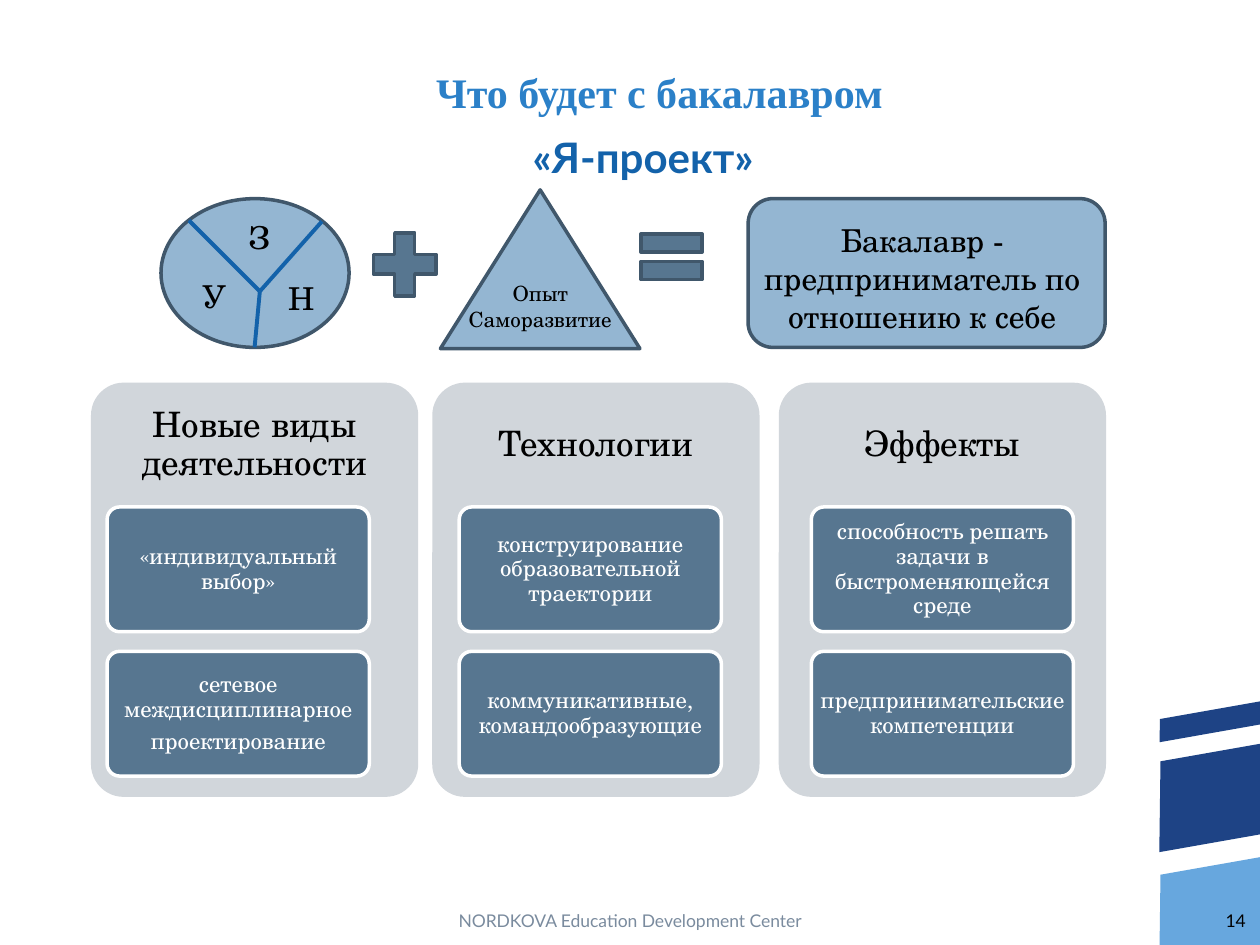
from lxml import etree
from pptx import Presentation
from pptx.dml.color import RGBColor
from pptx.enum import shapes as sh, text as tx
from pptx.oxml import ns
from pptx.util import Pt

SERIF = "TeX Gyre Schola"
BLUE, PALE, SLATE, EDGE = "1362AA", "94B6D2", "577690", "40576B"
PANEL, NAVY, SKY = "D1D6DB", "1E4385", "67A7DE"
KIND = sh.MSO_SHAPE

COLUMNS = [
    ("Новые виды деятельности",
     ["«индивидуальный выбор»", "сетевое междисциплинарное\nпроектирование"]),
    ("Технологии",
     ["конструирование образовательной траектории",
      "коммуникативные, командообразующие"]),
    ("Эффекты",
     ["способность решать задачи в быстроменяющейся среде",
      "предпринимательские компетенции"]),
]


def colour(value):
    return RGBColor.from_string(value)


def points(box):
    return [Pt(length) for length in box]


def write(holder, words, size=18, font=SERIF, ink="000000", bold=False, align="CENTER",
          anchor="TOP", insets=(7.2, 3.6), wrap=True, spacing=None, after=0):
    frame = holder.text_frame
    frame.word_wrap = wrap
    frame.vertical_anchor = getattr(tx.MSO_ANCHOR, anchor)
    frame.margin_left = frame.margin_right = Pt(insets[0])
    frame.margin_top = frame.margin_bottom = Pt(insets[1])
    frame.text = words
    for paragraph in frame.paragraphs:
        paragraph.alignment = getattr(tx.PP_ALIGN, align)
        paragraph.line_spacing = spacing
        paragraph.space_after = Pt(after)
        paragraph.font.size = Pt(size)
        paragraph.font.name = font
        paragraph.font.bold = bold
        paragraph.font.color.rgb = colour(ink)


def label(slide, box, words, **style):
    write(slide.shapes.add_textbox(*points(box)), words, **style)


def figure(slide, kind, box, fill, edge=None, corner=None, turn=0):
    shape = slide.shapes.add_shape(kind, *points(box))
    shape.shadow.inherit = False
    shape.fill.solid()
    shape.fill.fore_color.rgb = colour(fill)
    shape.rotation = turn
    if edge:
        shape.line.color.rgb = colour(edge)
        shape.line.width = Pt(2)
    else:
        shape.line.fill.background()
    if corner is not None:
        shape.adjustments[0] = corner
    return shape


def divider(slide, start, end):
    line = slide.shapes.add_connector(sh.MSO_CONNECTOR.STRAIGHT, *points(start + end))
    line.line.color.rgb = colour(BLUE)
    line.line.width = Pt(2.25)
    etree.SubElement(line._element.spPr, ns.qn("a:effectLst"))


def ribbon(slide, left, top):
    """Slanted bands in the lower right corner."""
    for dx, dy, width, height, fill in [(0, 24.5, 75, 51, NAVY), (3.5, 0, 68, 13, NAVY),
                                        (0, 89.3, 75, 51, SKY)]:
        figure(slide, KIND.PARALLELOGRAM, (left + dx, top + dy, width, height),
               fill, corner=0.19, turn=350)


def knowledge_circle(slide, left, top, width, height):
    """Ellipse split into three lettered sectors."""
    figure(slide, KIND.OVAL, (left, top, width, height), PALE, EDGE)
    hub = (left + 56.5, top + 53)
    for dx, dy in [(16, 12.5), (92, 13), (53.5, height)]:
        divider(slide, hub, (left + dx, top + dy))
    for letter, dx, dy in [("Н", 65.5, 42.5), ("З", 43, 7.5), ("У", 16.5, 41)]:
        label(slide, (left + dx, top + dy, 29, 29), letter, align="LEFT", wrap=False)


def experience_triangle(slide, left, top, width, height):
    figure(slide, KIND.ISOSCELES_TRIANGLE, (left, top, width, height), PALE, EDGE)
    label(slide, (left - 9, top + 48.5, width + 18, 36), "Опыт\nСаморазвитие", size=12)


def outcome(slide, left, top, width, height):
    figure(slide, KIND.ROUNDED_RECTANGLE, (left, top, width, height), PALE, EDGE)
    label(slide, (left, top + 9.5, width - 5, 59),
          "Бакалавр - предприниматель по отношению к себе")


def formula(slide, left, top):
    knowledge_circle(slide, left, top + 5, 107.5, 85)
    figure(slide, KIND.MATH_PLUS, (left + 115, top + 18, 48.5, 49), SLATE, EDGE)
    experience_triangle(slide, left + 159.7, top, 114, 90.7)
    figure(slide, KIND.MATH_EQUAL, (left + 268, top + 16, 47.5, 44.5), SLATE, EDGE)
    outcome(slide, left + 335.5, top + 5, 204, 85)


def column(slide, box, card_left, heading, cards):
    left, top, width, height = box
    figure(slide, KIND.ROUNDED_RECTANGLE, box, PANEL, corner=0.1)
    label(slide, (left, top, width, 71), heading, size=20, anchor="MIDDLE",
          insets=(6, 6), spacing=0.9, after=7)
    for row, words in enumerate(cards):
        card = figure(slide, KIND.ROUNDED_RECTANGLE,
                      (card_left, top + 71 + 82.5 * row, 149.8, 71.3),
                      SLATE, "FFFFFF", corner=0.1)
        write(card, words, size=13, ink="FFFFFF", anchor="MIDDLE", insets=(2.8, 2.3),
              spacing=0.9, after=4.5)


def columns(slide, top):
    for index, (left, (heading, cards)) in enumerate(zip((52, 247, 445), COLUMNS)):
        column(slide, (left, top, 187, 236.7), 61.2 + 201.2 * index, heading, cards)


def headings(slide):
    label(slide, (218, 34.5, 317.5, 36), "Что будет с бакалавром", size=24,
          font="Times New Roman", ink="2B80C8", bold=True)
    label(slide, (183.5, 77, 368, 30), "«Я-проект»", size=24, font="Lato", ink=BLUE,
          bold=True, anchor="BOTTOM", insets=(3, 3))


def footer(slide, top):
    label(slide, (246, top, 228, 26), "NORDKOVA Education Development Center", size=10,
          font="Lato", ink="7A8B9E", anchor="MIDDLE")
    label(slide, (678, top, 41, 26), "14", size=10, font="Lato", align="RIGHT",
          anchor="MIDDLE")


def main():
    deck = Presentation()
    deck.slide_width, deck.slide_height = Pt(720), Pt(540)
    slide = deck.slides.add_slide(deck.slide_layouts[6])
    ribbon(slide, 657.5, 405.3)
    headings(slide)
    formula(slide, 92, 108.5)
    columns(slide, 218.7)
    footer(slide, 513)
    deck.save("out.pptx")


if __name__ == "__main__":
    main()
